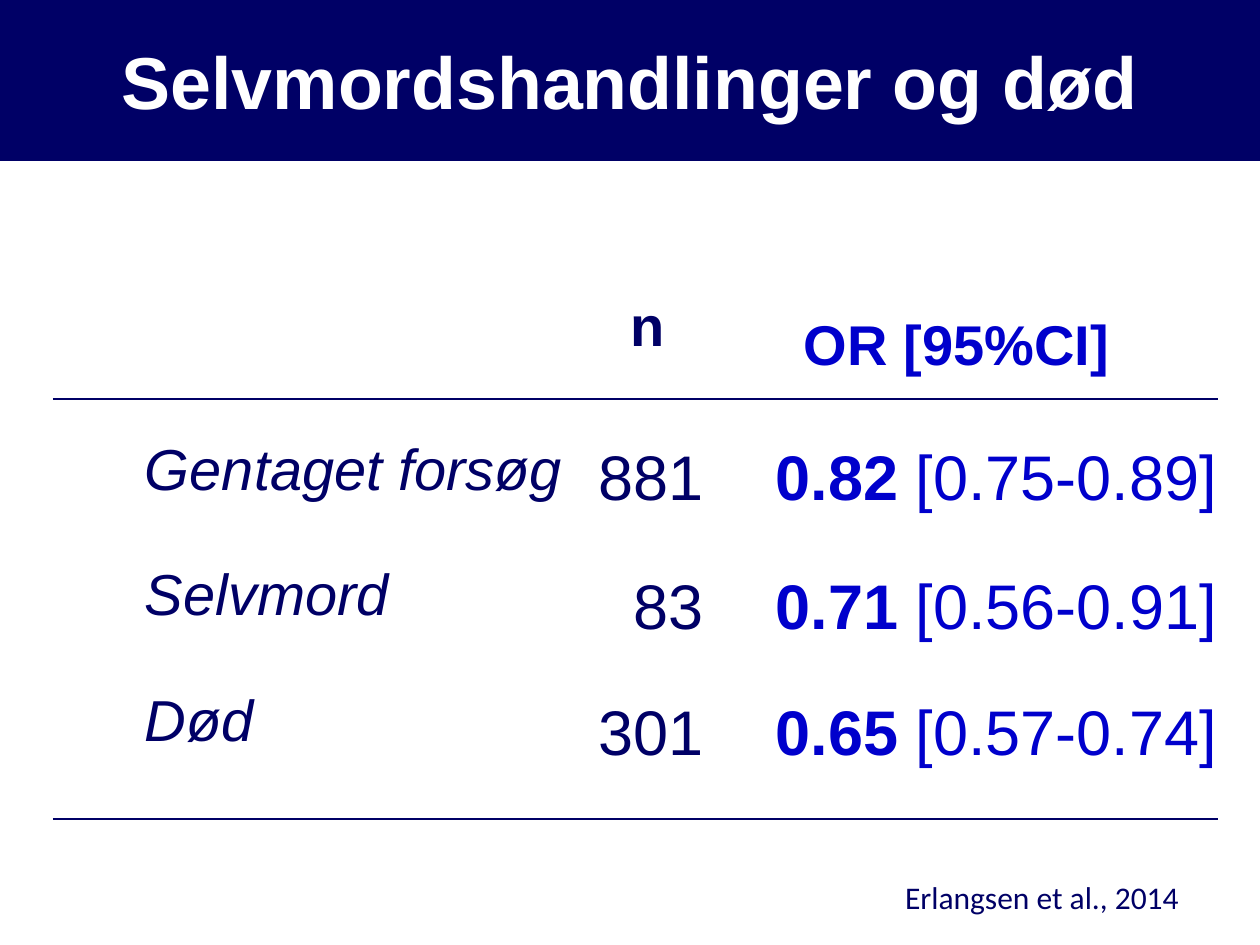
from lxml import etree
from pptx import Presentation
from pptx.dml.color import RGBColor
from pptx.enum.shapes import MSO_CONNECTOR
from pptx.enum.text import MSO_ANCHOR, MSO_AUTO_SIZE, PP_ALIGN
from pptx.oxml.ns import qn
from pptx.util import Emu, Pt

LEFT, CENTER, RIGHT = PP_ALIGN.LEFT, PP_ALIGN.CENTER, PP_ALIGN.RIGHT
TOP, MIDDLE = MSO_ANCHOR.TOP, MSO_ANCHOR.MIDDLE
NO_AUTOFIT = MSO_AUTO_SIZE.NONE
STRAIGHT = MSO_CONNECTOR.STRAIGHT

PX_PER_INCH = 126
NAVY, BLUE, WHITE = "000066", "0000CC", "FFFFFF"

TITLE_FONT = {"size": Pt(42), "bold": True}
HEADER_FONT = {"size": Pt(32), "bold": True}
LABEL_FONT = {"size": Pt(33), "italic": True}
VALUE_FONT = {"size": Pt(36), "bold": False}
ESTIMATE_FONT = {"size": Pt(36), "bold": True}
SOURCE_FONT = {"size": Pt(18), "name": "Calibri"}

# label, n, odds ratio, confidence interval, label top, value top
ROWS = [
    ("Gentaget forsøg", "881", "0.82", "[0.75-0.89]", 160, 165),
    ("Selvmord", "83", "0.71", "[0.56-0.91]", 285, 294),
    ("Død", "301", "0.65", "[0.57-0.74]", 411, 420),
]


def px(length):
    return Emu(round(length * 914400 / PX_PER_INCH))


def color(hex_value):
    return RGBColor.from_string(hex_value)


def place(shape, box):
    for name, length in zip(("left", "top", "width", "height"), box):
        setattr(shape, name, px(length))


def write(shape, runs, hex_value, align=LEFT, anchor=TOP, wrap=False):
    """Fill the shape with one paragraph of (text, font values) runs."""
    frame = shape.text_frame
    frame_values = {
        "word_wrap": wrap, "auto_size": NO_AUTOFIT, "vertical_anchor": anchor,
        "margin_left": 0, "margin_top": 0, "margin_right": 0, "margin_bottom": 0,
    }
    for name, value in frame_values.items():
        setattr(frame, name, value)
    paragraph = frame.paragraphs[0]
    paragraph.alignment = align
    for text, font_values in runs:
        run = paragraph.add_run()
        run.text = text
        run.font.color.rgb = color(hex_value)
        for name, value in {"name": "Arial", **font_values}.items():
            setattr(run.font, name, value)


def add_text(slide, box, runs, hex_value, align=LEFT):
    text_box = slide.shapes.add_textbox(*map(px, box))
    write(text_box, runs, hex_value, align)


def add_rule(slide, left, top, width):
    rule = slide.shapes.add_connector(
        STRAIGHT, px(left), px(top), px(left + width), px(top))
    rule.line.color.rgb = color(NAVY)
    rule.line.width = Pt(0.75)
    etree.SubElement(rule._element.spPr, qn("a:effectLst"))


def add_title(slide, box):
    title = slide.shapes.title
    place(title, box)
    title.fill.solid()
    title.fill.fore_color.rgb = color(NAVY)
    write(title, [("Selvmordshandlinger og død", TITLE_FONT)], WHITE, CENTER, MIDDLE)


def add_results(slide, box):
    left, top, width, height = box
    add_text(slide, (left + 577, top + 18, 34, 68), [("n", HEADER_FONT)], NAVY)
    add_text(slide, (left + 751, top + 36, 415, 68), [("OR [95%CI]", HEADER_FONT)], BLUE)
    for rule_top in (top + 126, top + height):
        add_rule(slide, left, rule_top, width)
    for label, count, ratio, interval, label_top, value_top in ROWS:
        add_text(slide, (left + 92, top + label_top, 421, 71),
                 [(label, LABEL_FONT)], NAVY)
        add_text(slide, (left + 545, top + value_top, 106, 77),
                 [(count, VALUE_FONT)], NAVY, RIGHT)
        add_text(slide, (left + 719, top + value_top, 445, 77),
                 [(ratio, ESTIMATE_FONT), (" " + interval, VALUE_FONT)], BLUE, RIGHT)


def add_source(slide, box):
    add_text(slide, box, [("Erlangsen et al., 2014", SOURCE_FONT)], NAVY)


def main():
    presentation = Presentation()
    presentation.slide_width, presentation.slide_height = px(1260), px(945)
    slide = presentation.slides.add_slide(presentation.slide_layouts[5])
    add_title(slide, (0, 0, 1260, 161))
    add_results(slide, (53, 273, 1165, 546))
    add_source(slide, (905, 878, 331, 40))
    presentation.save("out.pptx")


if __name__ == "__main__":
    main()
